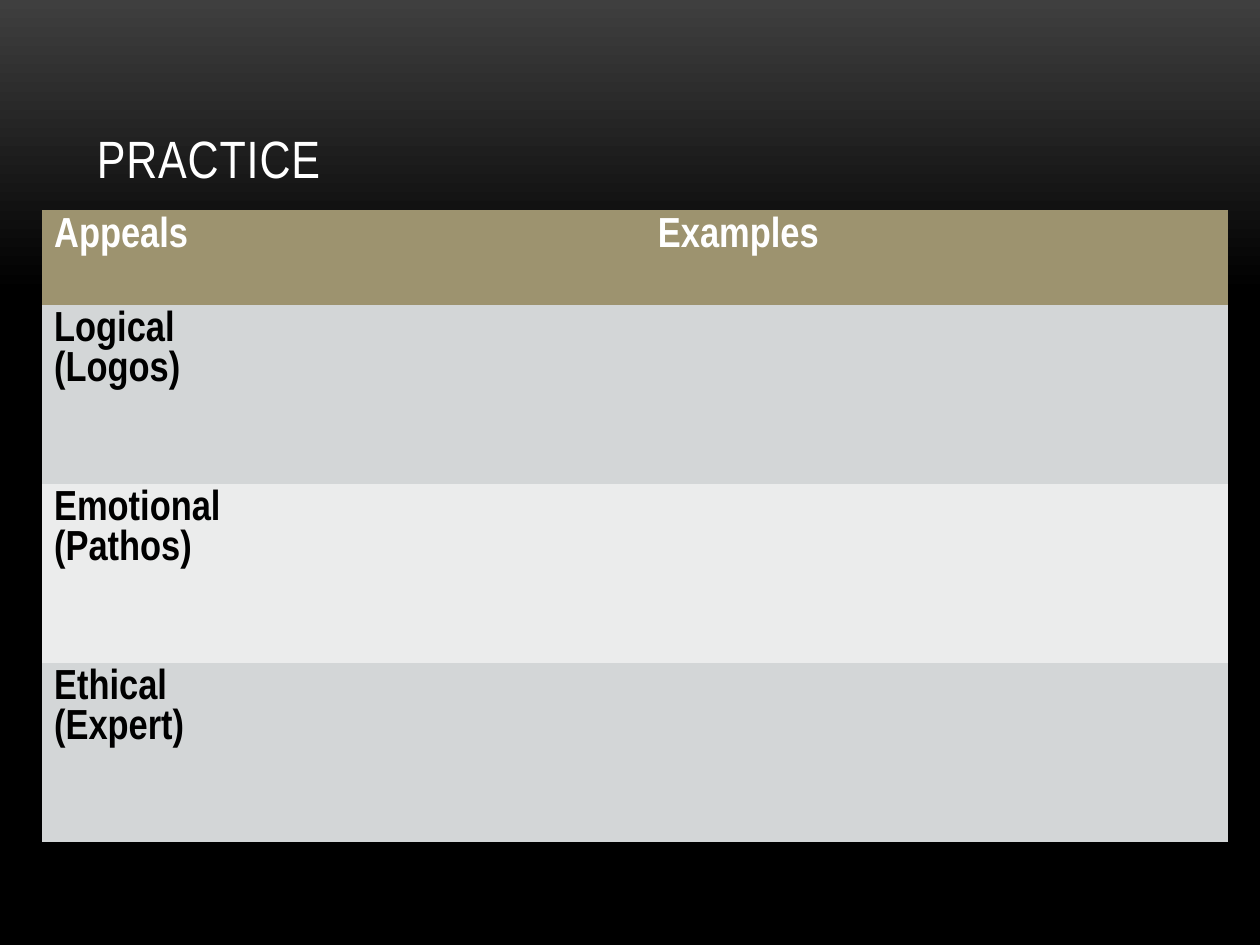
"""Build the rhetorical appeals practice slide."""
from pptx import Presentation
from pptx.dml.color import RGBColor
from pptx.enum.text import MSO_ANCHOR, PP_ALIGN
from pptx.util import Inches, Pt

BOTTOM = MSO_ANCHOR.BOTTOM
CENTER = PP_ALIGN.CENTER
FONT = "Arial Narrow"
NO_STYLE = "{2D5ABB26-0587-4C30-8999-92F81FD0307C}"

TITLE = "PRACTICE"
ROWS = [
    ("Appeals", "Examples"),
    ("Logical (Logos)", ""),
    ("Emotional (Pathos)", ""),
    ("Ethical (Expert)", ""),
]
COL_WIDTHS = [1.64, 7.78]
HEADER_HEIGHT, BODY_HEIGHT = 0.75, 1.42
HEADER_FILL, BAND_FILLS = "9D936F", ["D3D6D7", "EBECEC"]
BACKGROUND = [(0, "3F3F3F"), (0.31, "000000")]


def rgb(value):
    return RGBColor.from_string(value)


def style_font(font, size, color, bold=False):
    font.name = FONT
    font.size = Pt(size)
    font.bold = bold
    font.color.rgb = rgb(color)


def set_background(slide):
    fill = slide.background.fill
    fill.gradient()
    fill.gradient_angle = 270
    for stop, (position, color) in zip(fill.gradient_stops, BACKGROUND):
        stop.position = position
        stop.color.rgb = rgb(color)


def add_title(slide):
    box = slide.shapes.add_textbox(Inches(0.67), Inches(0.3), Inches(8.67), Inches(1.25))
    tf = box.text_frame
    tf.word_wrap = True
    tf.vertical_anchor = BOTTOM
    tf.text = TITLE
    r = tf.paragraphs[0].runs[0]
    style_font(r.font, 30, "FFFFFF")
    r.font._element.set("spc", "50")


def add_appeals_table(slide):
    heights = [HEADER_HEIGHT] + [BODY_HEIGHT] * (len(ROWS) - 1)
    frame = slide.shapes.add_table(
        len(ROWS), len(COL_WIDTHS), Inches(0.33), Inches(1.67),
        Inches(sum(COL_WIDTHS)), Inches(sum(heights)))
    table = frame.table
    table._tbl.tblPr.find("{*}tableStyleId").text = NO_STYLE
    for column, width in zip(table.columns, COL_WIDTHS):
        column.width = Inches(width)
    for i, (texts, height) in enumerate(zip(ROWS, heights)):
        table.rows[i].height = Inches(height)
        for j, text in enumerate(texts):
            cell = table.cell(i, j)
            cell.fill.solid()
            cell.fill.fore_color.rgb = rgb(BAND_FILLS[(i - 1) % 2] if i else HEADER_FILL)
            cell.text = text
            p = cell.text_frame.paragraphs[0]
            if j:
                p.alignment = CENTER
            for r in p.runs:
                style_font(r.font, 24, "000000" if i else "FFFFFF", bold=True)


def main():
    prs = Presentation()
    prs.slide_width, prs.slide_height = Inches(10), Inches(7.5)
    slide = prs.slides.add_slide(prs.slide_layouts[6])
    set_background(slide)
    add_title(slide)
    add_appeals_table(slide)
    prs.save("out.pptx")


if __name__ == "__main__":
    main()
